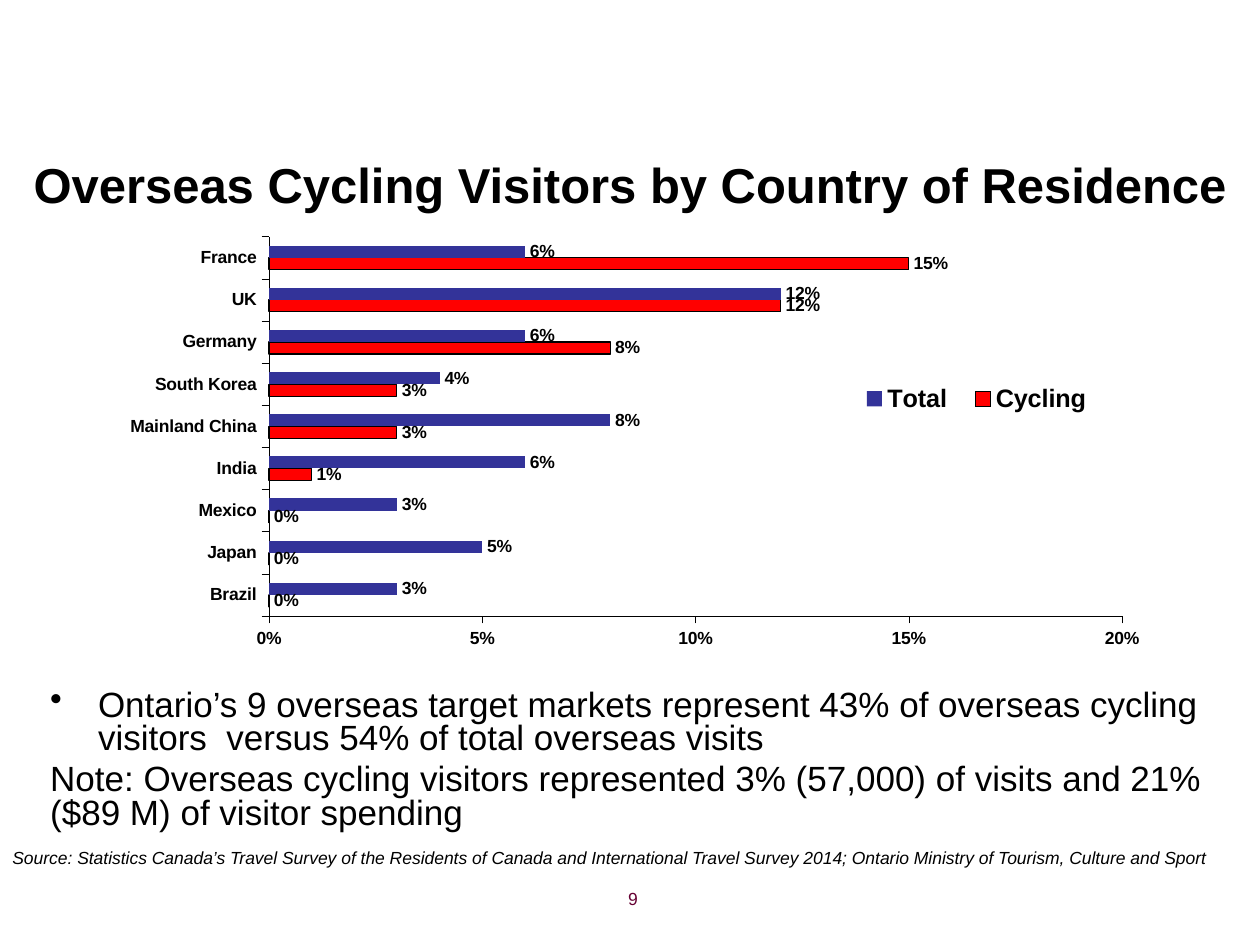
from lxml import etree
from pptx import Presentation
from pptx.chart.data import CategoryChartData
from pptx.dml.color import RGBColor
from pptx.enum.chart import (XL_CHART_TYPE, XL_LABEL_POSITION,
                             XL_LEGEND_POSITION, XL_TICK_MARK)
from pptx.enum.text import MSO_ANCHOR, PP_ALIGN
from pptx.oxml import parse_xml
from pptx.oxml.ns import nsdecls, qn
from pptx.util import Inches, Pt

BAR = XL_CHART_TYPE.BAR_CLUSTERED
OUT_END = XL_LABEL_POSITION.OUTSIDE_END
RIGHT_KEY = XL_LEGEND_POSITION.RIGHT
TICK_OUT, TICK_NONE = XL_TICK_MARK.OUTSIDE, XL_TICK_MARK.NONE
LEFT, CENTER, RIGHT = PP_ALIGN.LEFT, PP_ALIGN.CENTER, PP_ALIGN.RIGHT
TOP, MIDDLE = MSO_ANCHOR.TOP, MSO_ANCHOR.MIDDLE

THEME = {
    "font": "Arial", "ink": "000000", "page": "660033",
    "Cycling": "FF0000", "Total": "333399",
    "title": 28, "body": 20, "key": 14.4, "small": 10,
    "axis": 0.17, "edge": 0.68,
}

deck = Presentation()
deck.slide_width, deck.slide_height = Inches(10), Inches(7.5)
slide = deck.slides.add_slide(deck.slide_layouts[6])
COL, ROW = deck.slide_width / 100, deck.slide_height / 75


def style(font, size, color="ink", bold=False, italic=False):
    font.name, font.size = THEME["font"], Pt(THEME[size])
    font.bold, font.italic = bold, italic
    font.color.rgb = RGBColor.from_string(THEME[color])


def write(text, at, size="small", align=LEFT, anchor=TOP, lead=None,
          gap=0, bullets=(), **look):
    """Put text in a box at (left, top, width, height) in grid units, a line per paragraph."""
    x, y, w, h = at
    box = slide.shapes.add_textbox(int(x * COL), int(y * ROW),
                                   int(w * COL), int(h * ROW))
    frame = box.text_frame
    frame.word_wrap, frame.vertical_anchor = True, anchor
    for i, line in enumerate(text.split("\n")):
        para = frame.paragraphs[0] if i == 0 else frame.add_paragraph()
        para.alignment = align
        if lead:
            para.line_spacing = lead
        if i:
            para.space_before = Pt(gap)
        if i in bullets:
            props = para._p.get_or_add_pPr()
            props.set("marL", str(Inches(0.38)))
            props.set("indent", str(-Inches(0.38)))
            etree.SubElement(props, qn("a:buChar")).set("char", "•")
        run = para.add_run()
        run.text = line
        style(run.font, size, **look)


write("Overseas Cycling Visitors by Country of Residence",
      (0, 11.7, 100, 5.8), size="title", align=CENTER, anchor=MIDDLE, bold=True)

write("Ontario’s 9 overseas target markets represent 43% of overseas cycling "
      "visitors  versus 54% of total overseas visits\n"
      "Note: Overseas cycling visitors represented 3% (57,000) of visits and "
      "21% ($89 M) of visitor spending",
      (3, 54.3, 95, 13.3), size="body", lead=0.8, gap=4, bullets=(0,))

# Visitor shares by country, listed from the bottom bar up
data = CategoryChartData(number_format="0%")
data.categories = ["Brazil", "Japan", "Mexico", "India", "Mainland China",
                   "South Korea", "Germany", "UK", "France"]
data.add_series("Cycling", [0, 0, 0, 0.01, 0.03, 0.03, 0.08, 0.12, 0.15])
data.add_series("Total", [0.03, 0.05, 0.03, 0.06, 0.08, 0.04, 0.06, 0.12, 0.06])
chart = slide.shapes.add_chart(BAR, int(5.6 * COL), int(18.1 * ROW),
                               int(85.6 * COL), int(34.3 * ROW), data).chart
chart.has_title = False
style(chart.font, "key", bold=True)
black = RGBColor.from_string(THEME["ink"])

for axis in (chart.category_axis, chart.value_axis):
    axis.has_major_gridlines = False
    axis.major_tick_mark, axis.minor_tick_mark = TICK_OUT, TICK_NONE
    axis.format.line.color.rgb = black
    axis.format.line.width = Pt(THEME["axis"])
    style(axis.tick_labels.font, "small", bold=True)
scale = chart.value_axis
scale.minimum_scale, scale.maximum_scale, scale.major_unit = 0, 0.2, 0.05
scale.tick_labels.number_format = "0%"
scale.tick_labels.number_format_is_linked = False

plot = chart.plots[0]
plot.gap_width, plot.vary_by_categories = 150, False
for bars in plot.series:
    bars.invert_if_negative = False
    bars.format.fill.solid()
    bars.format.fill.fore_color.rgb = RGBColor.from_string(THEME[bars.name])
    if bars.name == "Cycling":
        bars.format.line.color.rgb = black
        bars.format.line.width = Pt(THEME["edge"])
    else:
        bars.format.line.fill.background()
    tags = bars.data_labels
    tags.show_value, tags.position = True, OUT_END
    tags.number_format, tags.number_format_is_linked = "0%", False
    style(tags.font, "small", bold=True)

chart.has_legend = True
key = chart.legend
key.position, key.include_in_layout = RIGHT_KEY, False
style(key.font, "key", bold=True)

# Fixed places for the plot and legend, as shares of the chart
area = chart._chartSpace.chart.plotArea
for old in area.findall(qn("c:layout")):
    area.remove(old)
for old in key._element.findall(qn("c:layout")):
    key._element.remove(old)
for host, spot, inner in (
        (area, (0.184, 0.02, 0.791, 0.878), True),
        (key._element, (0.72, 0.34, 0.24, 0.11), False)):
    tags = '<c:layoutTarget val="inner"/>' if inner else ""
    tags += '<c:xMode val="edge"/><c:yMode val="edge"/>'
    tags += "".join(f'<c:{k} val="{v}"/>' for k, v in zip("xywh", spot))
    layout = parse_xml(f'<c:layout {nsdecls("c")}><c:manualLayout>{tags}'
                       '</c:manualLayout></c:layout>')
    if inner:
        host.insert(0, layout)
    else:
        host.find(qn("c:legendPos")).addnext(layout)

write("9", (28.3, 70, 23.3, 3.5), align=RIGHT, color="page")
write("Source: Statistics Canada’s Travel Survey of the Residents of Canada and "
      "International Travel Survey 2014; Ontario Ministry of Tourism, Culture and Sport",
      (0, 66.7, 98, 2.7), italic=True)

deck.save("out.pptx")
